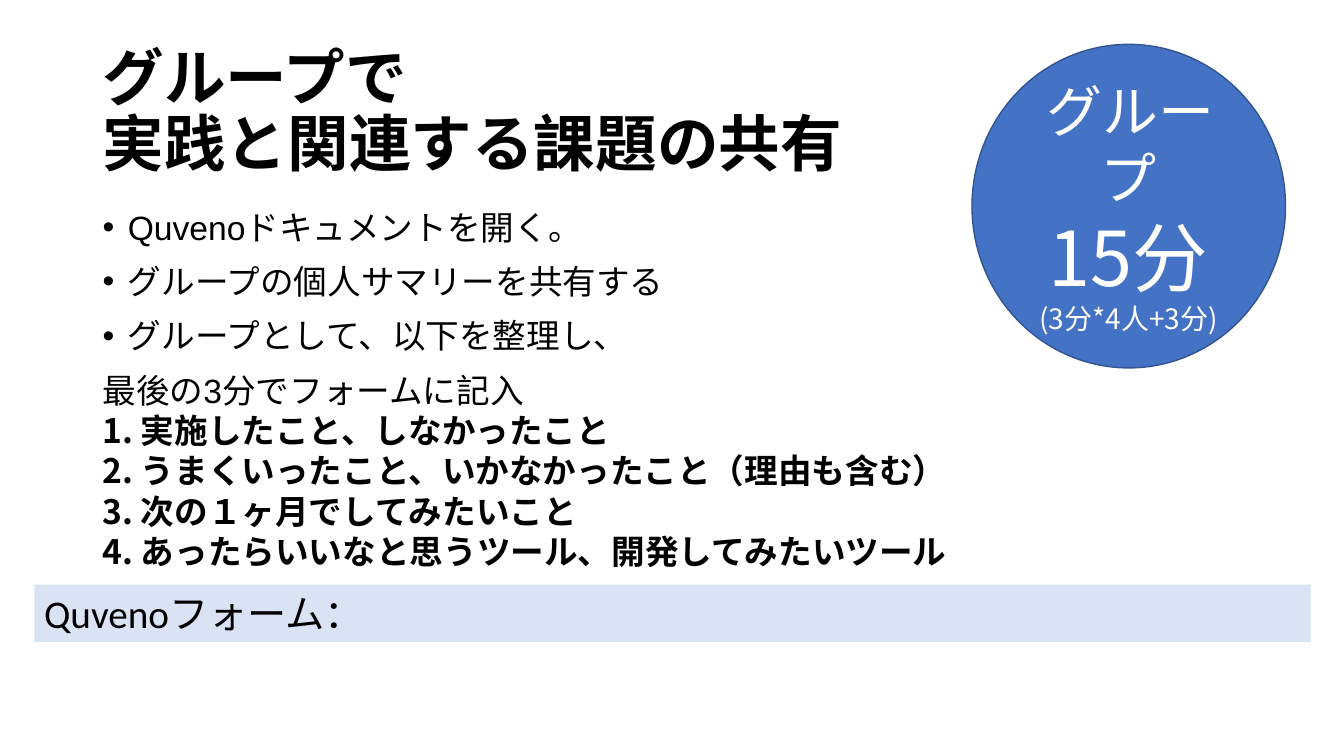
"""Build a slide that guides a group through sharing practice issues."""
from dataclasses import dataclass

from lxml import etree
from pptx import Presentation
from pptx.dml.color import RGBColor
from pptx.enum.shapes import MSO_SHAPE
from pptx.enum.text import MSO_ANCHOR, PP_ALIGN
from pptx.oxml.ns import qn
from pptx.util import Inches, Pt

OVAL, RECT = MSO_SHAPE.OVAL, MSO_SHAPE.RECTANGLE
TOP, MIDDLE = MSO_ANCHOR.TOP, MSO_ANCHOR.MIDDLE
LEFT, CENTER = PP_ALIGN.LEFT, PP_ALIGN.CENTER

WIDE, HIGH = Inches(13.33), Inches(7.5)
NOTO = "Noto Sans CJK JP"
HUE = {"ink": "000000", "white": "FFFFFF", "blue": "4472C4",
       "edge": "325491", "pale": "DAE3F3"}


@dataclass(frozen=True)
class Mark:
    """A list marker: its tag, its attributes and its hanging indent."""
    tag: str
    attr: dict[str, str]
    font: str
    hang: float


@dataclass(frozen=True)
class Line:
    """A paragraph, with any forced breaks written as newlines."""
    text: str
    size: int
    font: str = "Arial"
    hue: str = "ink"
    bold: bool = False
    align: PP_ALIGN = LEFT
    space: float = 1.0
    before: int = 0
    mark: Mark | None = None


@dataclass(frozen=True)
class Block:
    """A text block placed by percentages of the slide's size."""
    left: float
    top: float
    width: float
    height: float
    lines: list[Line]
    anchor: MSO_ANCHOR = TOP
    form: MSO_SHAPE | None = None
    fill: str = ""
    edge: str = ""


DOT = Mark("a:buChar", {"char": "•"}, "Arial", 0.25)
COUNT = Mark("a:buAutoNum", {"type": "arabicPeriod"}, NOTO, 0.38)

STEPS = ["Quvenoドキュメントを開く。",
         "グループの個人サマリーを共有する",
         "グループとして、以下を整理し、"]
ITEMS = ["実施したこと、しなかったこと",
         "うまくいったこと、いかなかったこと（理由も含む）",
         "次の１ヶ月でしてみたいこと",
         "あったらいいなと思うツール、開発してみたいツール"]
TIMES = [("グループ", 40), ("15分", 54), ("(3分*4人+3分)", 20)]

TITLE = [Line("グループで\n実践と関連する課題の共有", 44, bold=True, space=0.9)]
BODY = [
    *[Line(step, 24, before=10, mark=DOT) for step in STEPS],
    Line("最後の3分でフォームに記入", 24, before=10),
    *[Line(item, 24, bold=True, mark=COUNT) for item in ITEMS],
]
TIMER = [Line(text, size, NOTO, "white", align=CENTER) for text, size in TIMES]
FORM = [Line("Quvenoフォーム：", 28, "Calibri")]

BLOCKS = [
    Block(6.9, 5.33, 86.27, 19.33, TITLE, MIDDLE),
    Block(6.9, 26.67, 86.27, 63.47, BODY),
    Block(72.32, 5.87, 23.33, 42.8, TIMER, MIDDLE, OVAL, "blue", "edge"),
    Block(2.55, 77.33, 94.97, 7.6, FORM, TOP, RECT, "pale"),
]


def tint(name: str) -> RGBColor:
    """Look up a named colour."""
    return RGBColor.from_string(HUE[name])


def add_mark(para, mark: Mark) -> None:
    """Give a paragraph its bullet or number."""
    props = para._p.get_or_add_pPr()
    props.set("marL", str(Inches(mark.hang)))
    props.set("indent", str(-Inches(mark.hang)))
    etree.SubElement(props, qn("a:buFont"), typeface=mark.font)
    etree.SubElement(props, qn(mark.tag), mark.attr)


def add_line(para, line: Line) -> None:
    """Write one paragraph run by run."""
    para.alignment = line.align
    para.line_spacing = line.space
    para.space_before = Pt(line.before)
    if line.mark:
        add_mark(para, line.mark)
    for index, part in enumerate(line.text.split("\n")):
        if index:
            para.add_line_break()
        run = para.add_run()
        run.text = part
        font = run.font
        font.size, font.bold, font.name = Pt(line.size), line.bold, line.font
        font.color.rgb = tint(line.hue)
        etree.SubElement(run._r.get_or_add_rPr(), qn("a:ea"), typeface=NOTO)


def add_block(slide, block: Block) -> None:
    """Draw one block and its text."""
    place = (int(WIDE * block.left / 100), int(HIGH * block.top / 100),
             int(WIDE * block.width / 100), int(HIGH * block.height / 100))
    if block.form is None:
        shape = slide.shapes.add_textbox(*place)
    else:
        shape = slide.shapes.add_shape(block.form, *place)
        shape.shadow.inherit = False
        shape.fill.solid()
        shape.fill.fore_color.rgb = tint(block.fill)
        if block.edge:
            shape.line.color.rgb = tint(block.edge)
            shape.line.width = Pt(1)
        else:
            shape.line.fill.background()
    frame = shape.text_frame
    frame.word_wrap = True
    frame.vertical_anchor = block.anchor
    for index, line in enumerate(block.lines):
        add_line(frame.add_paragraph() if index else frame.paragraphs[0], line)


def main() -> None:
    """Make the deck and save it."""
    deck = Presentation()
    deck.slide_width, deck.slide_height = WIDE, HIGH
    slide = deck.slides.add_slide(deck.slide_layouts[6])
    for block in BLOCKS:
        add_block(slide, block)
    deck.save("out.pptx")


if __name__ == "__main__":
    main()
